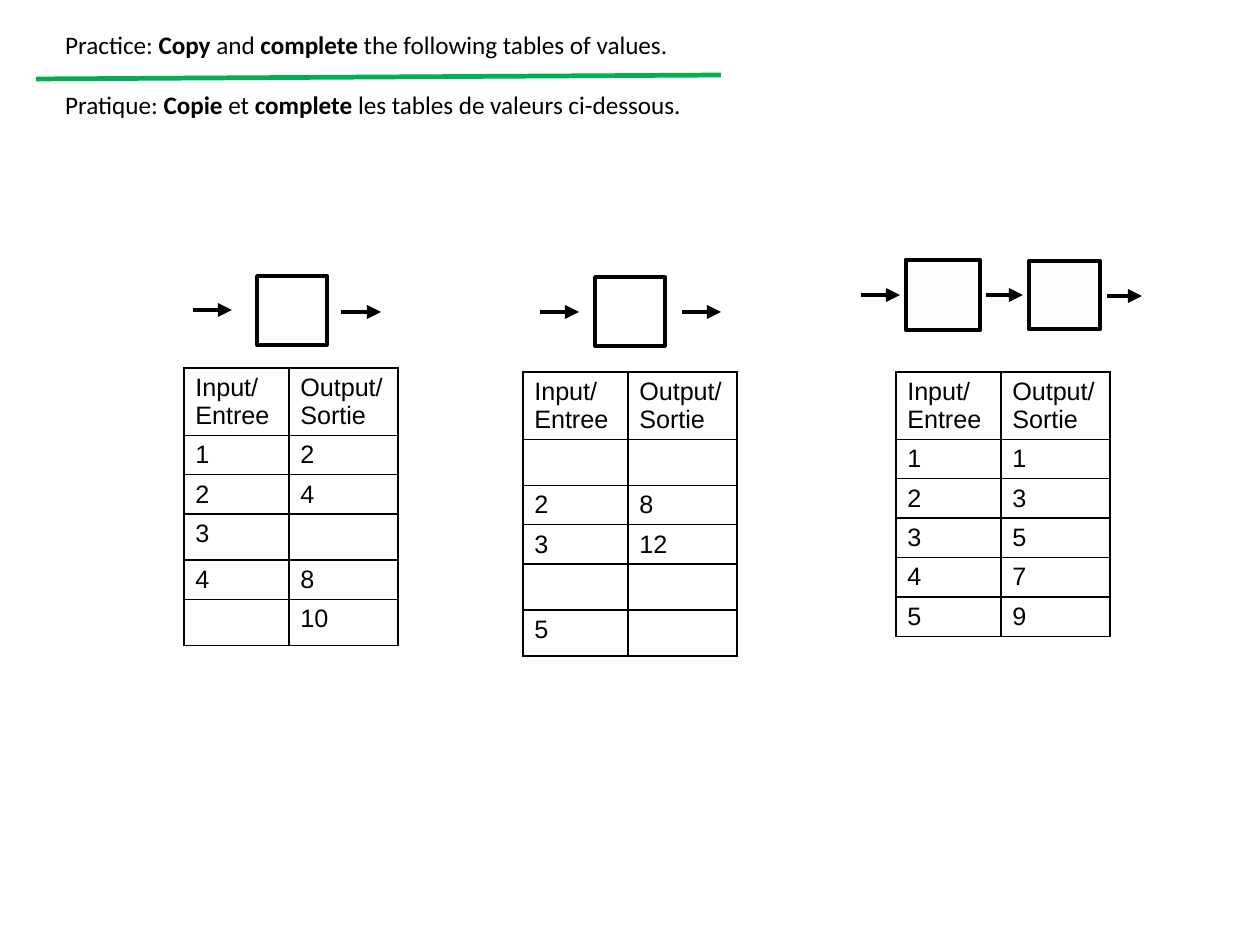
"""Builds a bilingual practice slide with function machines and tables of values."""
from dataclasses import dataclass

from lxml import etree
from pptx import Presentation
from pptx.dml.color import RGBColor
from pptx.enum.shapes import MSO_CONNECTOR, MSO_SHAPE
from pptx.oxml.ns import qn
from pptx.slide import Slide
from pptx.table import _Cell
from pptx.util import Emu, Pt

STRAIGHT = MSO_CONNECTOR.STRAIGHT
RECTANGLE = MSO_SHAPE.RECTANGLE
PX = 8064
BLANK_LAYOUT = 6
TEXT_SIZE = Pt(16)
COLORS = {"ink": "000000", "paper": "FFFFFF", "tint": "FCFDFF", "rule": "00B050"}
COLUMN_WIDTHS = (105, 109)
ROW_HEIGHT = 36
HEADER = ("Input/ Entree", "Output/Sortie")
BORDER_SIDES = ("a:lnL", "a:lnR", "a:lnT", "a:lnB")


@dataclass
class ValueTable:
    left: int
    top: int
    rows: list[tuple[str, str]]


@dataclass
class Machine:
    left: int
    top: int
    width: int
    height: int
    weight: float = 2.25
    fill: str = ""


@dataclass
class Line:
    start: tuple[int, int]
    end: tuple[int, int]
    color: str = "ink"
    arrow: bool = True


TABLES = [
    ValueTable(896, 372, [("1", "1"), ("2", "3"), ("3", "5"), ("4", "7"), ("5", "9")]),
    ValueTable(523, 372, [("", ""), ("2", "8"), ("3", "12"), ("", ""), ("5", "")]),
    ValueTable(184, 368, [("1", "2"), ("2", "4"), ("3", ""), ("4", "8"), ("", "10")]),
]
MACHINES = [
    Machine(906, 260, 74, 70, 3, "tint"),
    Machine(1029, 261, 71, 68, 3, "tint"),
    Machine(257, 276, 70, 69),
    Machine(595, 277, 70, 69),
]
LINES = [
    Line((861, 295), (900, 295)),
    Line((986, 295), (1023, 295)),
    Line((1107, 296), (1142, 296)),
    Line((193, 310), (232, 310)),
    Line((341, 312), (381, 312)),
    Line((540, 312), (579, 312)),
    Line((682, 312), (721, 312)),
    Line((36, 79), (721, 75), "rule", False),
]
INSTRUCTIONS = [
    ("Practice: ", "Copy", " and ", "complete", " the following tables of values."),
    ("Pratique: ", "Copie", " et ", "complete", " les tables de valeurs ci-dessous."),
]


def px(value: int) -> Emu:
    """Convert pixels to EMU."""
    return Emu(value * PX)


def rgb(name: str) -> RGBColor:
    """Look up a named colour."""
    return RGBColor.from_string(COLORS[name])


def add_borders(cell: _Cell) -> None:
    """Give a cell thin borders on all four sides."""
    properties = cell._tc.get_or_add_tcPr()
    for position, side in enumerate(BORDER_SIDES):
        border = etree.Element(qn(side), w=str(Pt(1)))
        fill = etree.SubElement(border, qn("a:solidFill"))
        etree.SubElement(fill, qn("a:srgbClr"), val=COLORS["ink"])
        properties.insert(position, border)


def fill_cell(cell: _Cell, text: str) -> None:
    """Set the fill, borders and text of a cell."""
    cell.fill.solid()
    cell.fill.fore_color.rgb = rgb("paper")
    add_borders(cell)
    if text:
        cell.text_frame.text = text
        font = cell.text_frame.paragraphs[0].runs[0].font
        font.name, font.size, font.color.rgb = "Arial", TEXT_SIZE, rgb("ink")


def add_values(page: Slide, values: ValueTable) -> None:
    """Add a table of values with its header row."""
    rows = [HEADER, *values.rows]
    frame = page.shapes.add_table(
        len(rows), len(COLUMN_WIDTHS), px(values.left), px(values.top),
        px(sum(COLUMN_WIDTHS)), px(ROW_HEIGHT * len(rows)))
    table = frame.table
    table.first_row = table.horz_banding = False
    for column, width in zip(table.columns, COLUMN_WIDTHS):
        column.width = px(width)
    for row_index, row in enumerate(rows):
        for column_index, text in enumerate(row):
            fill_cell(table.cell(row_index, column_index), text)


def add_instructions(page: Slide) -> None:
    """Add the instructions in both languages, with every second span bold."""
    box = page.shapes.add_textbox(px(54), px(24), px(667), px(103))
    frame = box.text_frame
    frame.word_wrap = True
    for index, spans in enumerate(INSTRUCTIONS):
        para = frame.add_paragraph() if index else frame.paragraphs[0]
        para.space_before = Pt(19 * index)
        for position, text in enumerate(spans):
            span = para.add_run()
            span.text = text
            font = span.font
            font.name, font.size, font.color.rgb = "Calibri", TEXT_SIZE, rgb("ink")
            font.bold = position % 2 == 1


def add_machine(page: Slide, machine: Machine) -> None:
    """Add the square of a function machine."""
    square = page.shapes.add_shape(
        RECTANGLE, px(machine.left), px(machine.top), px(machine.width), px(machine.height))
    square.shadow.inherit = False
    square.line.color.rgb = rgb("ink")
    square.line.width = Pt(machine.weight)
    if machine.fill:
        square.fill.solid()
        square.fill.fore_color.rgb = rgb(machine.fill)
    else:
        square.fill.background()


def add_line(page: Slide, line: Line) -> None:
    """Add a straight line, with an arrowhead if it has one."""
    connector = page.shapes.add_connector(STRAIGHT, *map(px, line.start + line.end))
    connector.line.color.rgb = rgb(line.color)
    connector.line.width = Pt(3)
    properties = connector._element.spPr
    if line.arrow:
        etree.SubElement(properties.find(qn("a:ln")), qn("a:tailEnd"), type="triangle")
    etree.SubElement(properties, qn("a:effectLst"))


def main() -> None:
    """Build and save the deck."""
    deck = Presentation()
    deck.slide_width, deck.slide_height = px(1260), px(945)
    page = deck.slides.add_slide(deck.slide_layouts[BLANK_LAYOUT])
    for values in TABLES:
        add_values(page, values)
    add_instructions(page)
    for machine in MACHINES:
        add_machine(page, machine)
    for line in LINES:
        add_line(page, line)
    deck.save("out.pptx")


if __name__ == "__main__":
    main()
